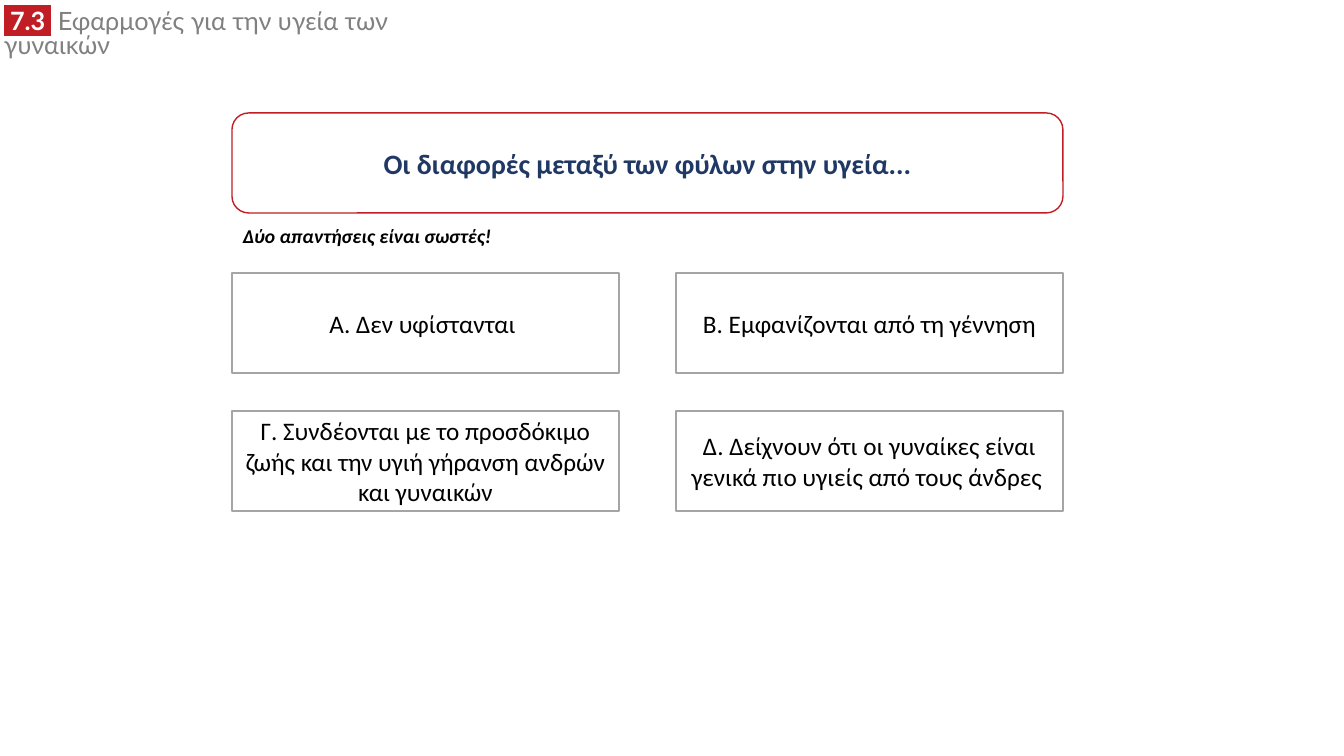
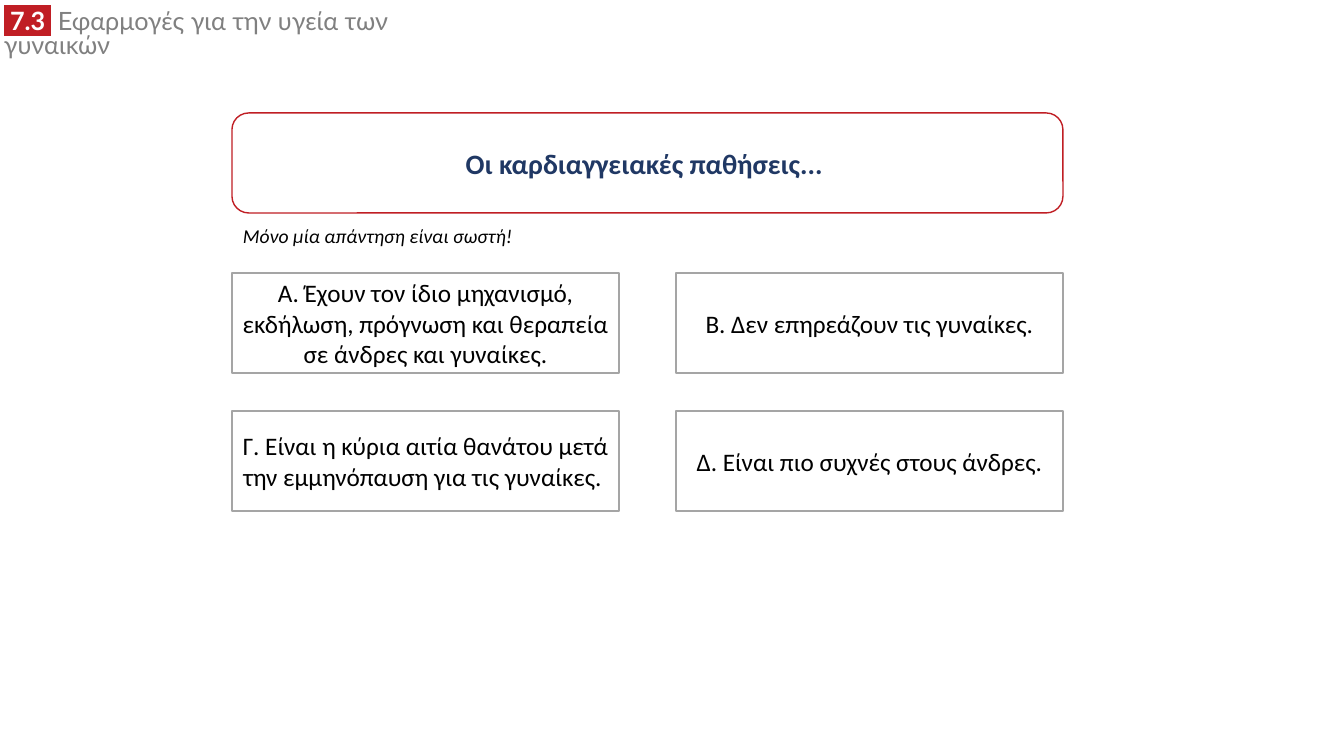
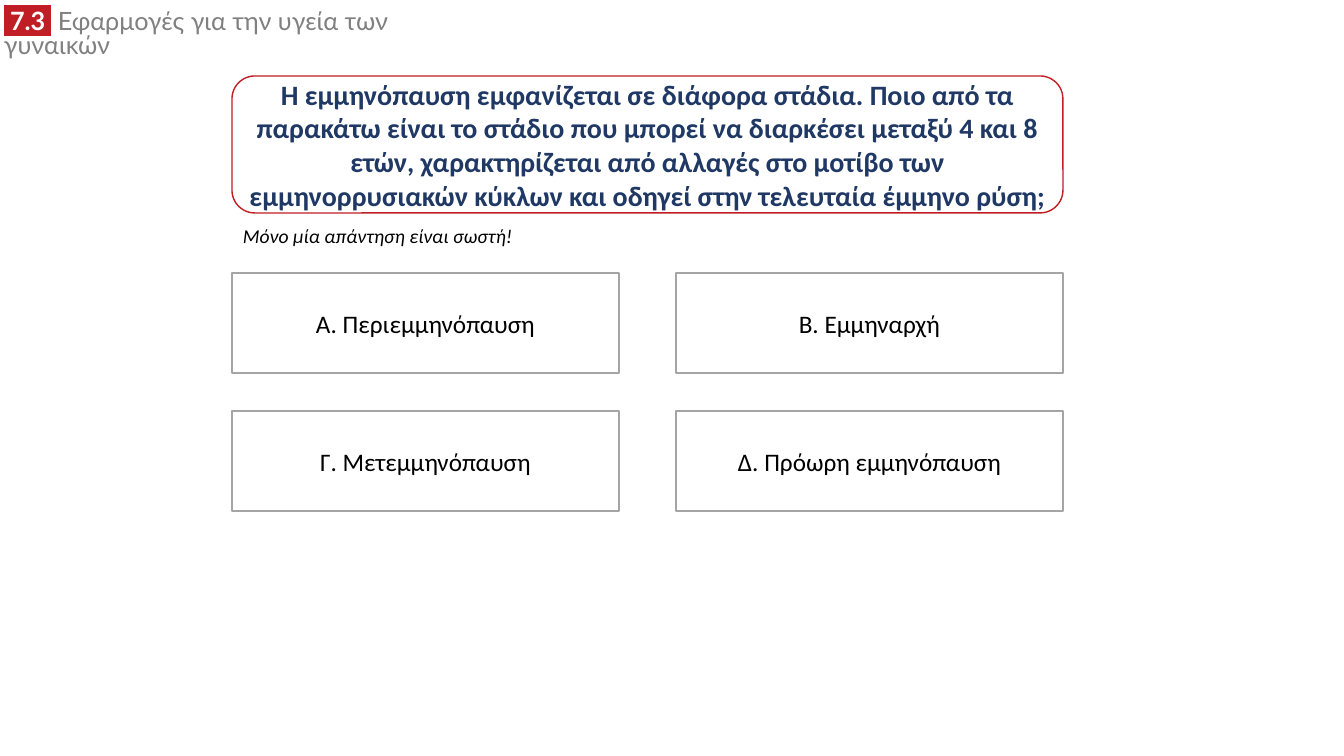
from lxml.etree import SubElement
from pptx import Presentation
from pptx.dml.color import RGBColor
from pptx.enum.shapes import MSO_SHAPE
from pptx.enum.text import MSO_ANCHOR, MSO_AUTO_SIZE, PP_ALIGN
from pptx.oxml.ns import qn
from pptx.util import Pt

SECTION_NUMBER = " 7.3 "
SECTION_NAME = " Εφαρμογές για την υγεία των γυναικών"
ONE_CORRECT = "Μόνο μία απάντηση είναι σωστή!"

QUIZ = [
    {
        "question": "Οι διαφορές μεταξύ των φύλων στην υγεία...",
        "top": 113,
        "hint": "Δύο απαντήσεις είναι σωστές!",
        "hint_bold": True,
        "answers": [
            "Α. Δεν υφίστανται ",
            "Β. Εμφανίζονται από τη γέννηση",
            "Γ. Συνδέονται με το προσδόκιμο ζωής και την υγιή γήρανση ανδρών και γυναικών",
            "Δ. Δείχνουν ότι οι γυναίκες είναι γενικά πιο υγιείς από τους άνδρες ",
        ],
    },
    {
        "question": "Οι καρδιαγγειακές παθήσεις... ",
        "top": 113,
        "hint": ONE_CORRECT,
        "hint_bold": False,
        "answers": [
            "Α. Έχουν τον ίδιο μηχανισμό, εκδήλωση, πρόγνωση και θεραπεία σε άνδρες και γυναίκες.",
            "Β. Δεν επηρεάζουν τις γυναίκες.",
            "Γ. Είναι η κύρια αιτία θανάτου μετά την εμμηνόπαυση για τις γυναίκες. ",
            "Δ. Είναι πιο συχνές στους άνδρες.",
        ],
    },
    {
        "question": "Η εμμηνόπαυση εμφανίζεται σε διάφορα στάδια. Ποιο από τα παρακάτω "
                    "είναι το στάδιο που μπορεί να διαρκέσει μεταξύ 4 και 8 ετών, "
                    "χαρακτηρίζεται από αλλαγές στο μοτίβο των εμμηνορρυσιακών κύκλων "
                    "και οδηγεί στην τελευταία έμμηνο ρύση;",
        "top": 76,
        "hint": ONE_CORRECT,
        "hint_bold": False,
        "answers": [
            "Α. Περιεμμηνόπαυση",
            "Β. Εμμηναρχή",
            "Γ. Μετεμμηνόπαυση",
            "Δ. Πρόωρη εμμηνόπαυση",
        ],
    },
]

COLORS = {
    "white": "FFFFFF",
    "red": "C01E24",
    "gray": "808080",
    "border": "A5A5A5",
    "navy": "203864",
    "black": "000000",
}
STYLES = {
    "number": {"name": "Lato", "size": Pt(18), "bold": True, "color": "white"},
    "section": {"name": "Lato", "size": Pt(18), "bold": False, "color": "gray"},
    "question": {"name": "Calibri", "size": Pt(20), "bold": True, "color": "navy"},
    "hint": {"name": "Calibri", "size": Pt(14), "italic": True, "color": "black"},
    "answer": {"name": "Calibri", "size": Pt(18), "color": "black"},
}

PX_PER_INCH = 100.8
SLIDE_SIZE = (1344, 756)
HEADER = (-6, 6, 505, 35)
LEFT, CONTENT_WIDTH = 232, 831
QUESTION_BOTTOM = 213
QUESTION_INSET = 16
HINT = (233, 219, 291, 34)
ANSWER_TOP, ANSWER_WIDTH, ANSWER_HEIGHT = 273, 387, 100
COLUMN_STEP = CONTENT_WIDTH - ANSWER_WIDTH
ROW_STEP = 138


def px(length):
    return round(length * 914400 / PX_PER_INCH)


def color(name):
    return RGBColor.from_string(COLORS[name])


def add_run(paragraph, text, style, **changes):
    run = paragraph.add_run()
    run.text = text
    for attribute, value in {**STYLES[style], **changes}.items():
        if attribute == "color":
            run.font.color.rgb = color(value)
        else:
            setattr(run.font, attribute, value)
    return run


def highlight(run, name):
    properties = run.font.fill and run._r.get_or_add_rPr()
    mark = SubElement(properties, qn("a:highlight"))
    SubElement(mark, qn("a:srgbClr")).set("val", COLORS[name])
    properties.find(qn("a:latin")).addprevious(mark)


def add_text_box(slide, box):
    shape = slide.shapes.add_textbox(*map(px, box))
    shape.text_frame.word_wrap = True
    return shape


def add_panel(slide, kind, box, border):
    shape = slide.shapes.add_shape(kind, *map(px, box))
    shape.shadow.inherit = False
    shape.fill.solid()
    shape.fill.fore_color.rgb = color("white")
    shape.line.color.rgb = color(border)
    shape.line.width = Pt(1)
    return shape


def write_centered(shape, text, style):
    frame = shape.text_frame
    frame.word_wrap = True
    frame.auto_size = MSO_AUTO_SIZE.NONE
    frame.vertical_anchor = MSO_ANCHOR.MIDDLE
    frame.paragraphs[0].alignment = PP_ALIGN.CENTER
    add_run(frame.paragraphs[0], text, style)


def move_header_to_layout(slide):
    header = add_text_box(slide, HEADER)
    paragraph = header.text_frame.paragraphs[0]
    paragraph.line_spacing = 0.8
    highlight(add_run(paragraph, SECTION_NUMBER, "number"), "red")
    add_run(paragraph, SECTION_NAME, "section")
    slide.slide_layout.shapes.element.append(header.element)


def add_question(slide, text, top):
    box = (LEFT, top, CONTENT_WIDTH, QUESTION_BOTTOM - top)
    add_panel(slide, MSO_SHAPE.ROUNDED_RECTANGLE, box, "red")
    title = slide.shapes.title
    slide.shapes.element.append(title.element)
    for attribute, length in zip(("left", "top", "width", "height"), box):
        setattr(title, attribute, px(length))
    for side, inset in (("left", QUESTION_INSET), ("right", QUESTION_INSET), ("top", 0), ("bottom", 0)):
        setattr(title.text_frame, f"margin_{side}", px(inset))
    write_centered(title, text, "question")


def add_answers(slide, answers):
    for index, answer in enumerate(answers):
        row, column = divmod(index, 2)
        box = (LEFT + column * COLUMN_STEP, ANSWER_TOP + row * ROW_STEP, ANSWER_WIDTH, ANSWER_HEIGHT)
        write_centered(add_panel(slide, MSO_SHAPE.RECTANGLE, box, "border"), answer, "answer")


def main():
    presentation = Presentation()
    presentation.slide_width, presentation.slide_height = map(px, SLIDE_SIZE)
    layout = presentation.slide_layouts.get_by_name("Title Only")
    for index, quiz in enumerate(QUIZ):
        slide = presentation.slides.add_slide(layout)
        if index == 0:
            move_header_to_layout(slide)
        add_question(slide, quiz["question"], quiz["top"])
        hint = add_text_box(slide, HINT)
        add_run(hint.text_frame.paragraphs[0], quiz["hint"], "hint", bold=quiz["hint_bold"])
        add_answers(slide, quiz["answers"])
    presentation.save("out.pptx")


if __name__ == "__main__":
    main()
